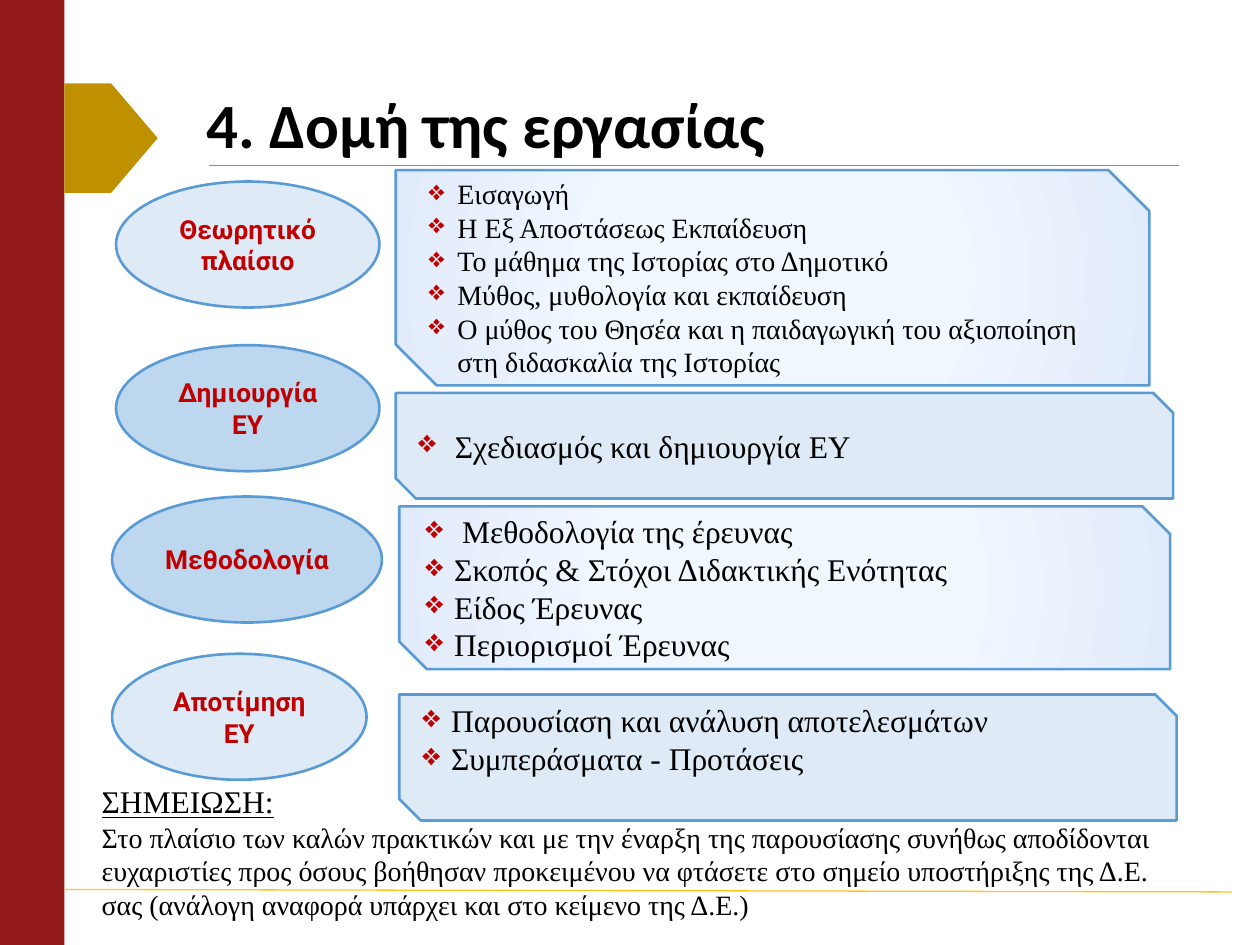
from dataclasses import dataclass

from lxml.etree import SubElement
from pptx import Presentation
from pptx.dml.color import RGBColor
from pptx.enum.shapes import MSO_CONNECTOR, MSO_SHAPE
from pptx.enum.text import MSO_ANCHOR, MSO_AUTO_SIZE, PP_ALIGN
from pptx.oxml import parse_xml
from pptx.oxml.ns import nsdecls, qn
from pptx.util import Cm, Pt


@dataclass(frozen=True)
class Theme:
    heading: str = "Calibri"
    label: str = "Roboto"
    body: str = "Times New Roman"
    title_size: int = 36
    large: int = 18
    medium: int = 16
    small: int = 15
    black: str = "000000"
    red: str = "C00000"
    maroon: str = "931B1B"
    gold: str = "BF9000"
    yellow: str = "FFC61A"
    blue: str = "5B9BD5"
    pale: str = "DEEBF7"
    sky: str = "BDD7EE"
    glow_inner: str = "F1F7FE"
    glow_outer: str = "E1EBFB"


THEME = Theme()
HANG = 0.58
WIDE_HANG = 0.74
GLOW = "glow"

STAGES = [
    ((2.34, 3.66, 5.31, 2.54), THEME.pale, ["Θεωρητικό", "πλαίσιο"]),
    ((2.34, 6.96, 5.31, 2.54), THEME.sky, ["Δημιουργία ΕΥ"]),
    ((2.26, 10.01, 5.44, 2.54), THEME.sky, ["Μεθοδολογία"]),
    ((2.26, 13.18, 5.13, 2.54), THEME.pale, ["Αποτίμηση ΕΥ"]),
]

PANELS = [
    ((7.98, 3.43, 15.19, 4.34), GLOW, 0.19, THEME.medium, 0.13, [
        ("Εισαγωγή", HANG),
        ("Η Εξ Αποστάσεως Εκπαίδευση", HANG),
        ("Το μάθημα της Ιστορίας στο Δημοτικό", HANG),
        ("Μύθος, μυθολογία και εκπαίδευση", HANG),
        ("Ο μύθος του Θησέα και η παιδαγωγική του αξιοποίηση "
         "στη διδασκαλία της Ιστορίας", HANG),
    ]),
    ((7.98, 7.92, 15.67, 2.13), THEME.pale, 0.19, THEME.large, 0.13, [
        ("Σχεδιασμός και δημιουργία ΕΥ", WIDE_HANG),
    ]),
    ((8.05, 10.21, 15.54, 3.28), GLOW, 0.17, THEME.large, 0.13, [
        ("Μεθοδολογία της έρευνας", WIDE_HANG),
        ("Σκοπός & Στόχοι Διδακτικής Ενότητας", HANG),
        ("Είδος Έρευνας", HANG),
        ("Περιορισμοί Έρευνας", HANG),
    ]),
    ((8.05, 14, 15.67, 2.54), THEME.pale, 0.17, THEME.large, 0.88, [
        ("Παρουσίαση και ανάλυση αποτελεσμάτων", HANG),
        ("Συμπεράσματα - Προτάσεις", HANG),
    ]),
]

NOTE = ("Στο πλαίσιο των καλών πρακτικών και με την έναρξη της παρουσίασης "
        "συνήθως αποδίδονται ευχαριστίες προς όσους βοήθησαν προκειμένου να "
        "φτάσετε στο σημείο υποστήριξης της Δ.Ε. σας (ανάλογη αναφορά υπάρχει "
        "και στο κείμενο της Δ.Ε.)")


def rgb(color):
    return RGBColor.from_string(color)


def style_font(paragraph, name, size, color, bold=False, underline=False):
    font = paragraph.font
    font.name, font.size, font.bold = name, Pt(size), bold
    font.underline = underline
    font.color.rgb = rgb(color)


def add_paragraphs(frame, texts):
    frame.text = "\n".join(texts)
    return frame.paragraphs


def fill_glow(shape):
    shape.fill.gradient()
    stops = shape.fill.gradient_stops
    for stop, position, color in zip(
            stops, (0.45, 1), (THEME.glow_inner, THEME.glow_outer)):
        stop.position = position
        stop.color.rgb = rgb(color)
    gradient = shape._element.spPr.find(qn("a:gradFill"))
    gradient.replace(gradient.find(qn("a:lin")), parse_xml(
        f'<a:path {nsdecls("a")} path="circle">'
        '<a:fillToRect l="50000" t="50000" r="50000" b="50000"/></a:path>'))


def add_block(slide, kind, box, fill, outlined=True):
    shape = slide.shapes.add_shape(kind, *map(Cm, box))
    shape.shadow.inherit = False
    if fill == GLOW:
        fill_glow(shape)
    else:
        shape.fill.solid()
        shape.fill.fore_color.rgb = rgb(fill)
    if outlined:
        shape.line.color.rgb = rgb(THEME.blue)
        shape.line.width = Pt(1.5)
    else:
        shape.line.fill.background()
    return shape


def add_rule(slide, ends, color):
    rule = slide.shapes.add_connector(MSO_CONNECTOR.STRAIGHT, *map(Cm, ends))
    rule.line.color.rgb = rgb(color)
    rule.line.width = Pt(0.75)
    SubElement(rule._element.spPr, qn("a:effectLst"))


def add_title(slide, text):
    title = slide.shapes.title
    title.left, title.top, title.width, title.height = map(
        Cm, (3.91, 1.52, 19.99, 2.13))
    frame = title.text_frame
    frame.auto_size = MSO_AUTO_SIZE.NONE
    frame.vertical_anchor = MSO_ANCHOR.MIDDLE
    paragraph, = add_paragraphs(frame, [text])
    paragraph.alignment = PP_ALIGN.LEFT
    paragraph.line_spacing = 0.9
    style_font(paragraph, THEME.heading, THEME.title_size, THEME.black, True)


def add_note(slide, heading, text):
    frame = slide.shapes.add_textbox(
        *map(Cm, (1.8, 15.65, 21.79, 3.07))).text_frame
    frame.word_wrap = True
    first, second = add_paragraphs(frame, [heading, text])
    style_font(first, THEME.body, THEME.large, THEME.black, underline=True)
    style_font(second, THEME.body, THEME.medium, THEME.black)


def add_stage(slide, box, fill, lines):
    stage = add_block(slide, MSO_SHAPE.OVAL, box, fill)
    for paragraph in add_paragraphs(stage.text_frame, lines):
        paragraph.alignment = PP_ALIGN.CENTER
        style_font(paragraph, THEME.label, THEME.small, THEME.red, True)


def add_bullet(paragraph, hang):
    properties = paragraph._p.get_or_add_pPr()
    properties.set("marL", str(Cm(hang)))
    properties.set("indent", str(-Cm(hang)))
    color = SubElement(properties, qn("a:buClr"))
    SubElement(color, qn("a:srgbClr"), val=THEME.red)
    SubElement(properties, qn("a:buChar"), char="❖")


def add_panel(slide, box, fill, snip, size, bottom_margin, items):
    panel = add_block(slide, MSO_SHAPE.SNIP_2_DIAG_RECTANGLE, box, fill)
    panel.adjustments[1] = snip
    frame = panel.text_frame
    frame.margin_bottom = Cm(bottom_margin)
    paragraphs = add_paragraphs(frame, [text for text, _ in items])
    for paragraph, (_, hang) in zip(paragraphs, items):
        paragraph.alignment = PP_ALIGN.LEFT
        add_bullet(paragraph, hang)
        style_font(paragraph, THEME.body, size, THEME.black)


def main():
    presentation = Presentation()
    presentation.slide_width, presentation.slide_height = Cm(25.4), Cm(19.05)
    slide = presentation.slides.add_slide(presentation.slide_layouts[5])
    add_block(slide, MSO_SHAPE.RECTANGLE, (0, 0, 1.3, 19.05), THEME.maroon, False)
    add_rule(slide, (4.22, 3.33, 23.77, 3.33), THEME.blue)
    add_rule(slide, (1.3, 17.93, 24.84, 17.98), THEME.yellow)
    add_block(slide, MSO_SHAPE.PENTAGON, (1.3, 1.68, 1.88, 2.21), THEME.gold, False)
    add_title(slide, "4. Δομή της εργασίας")
    add_note(slide, "ΣΗΜΕΙΩΣΗ:", NOTE)
    for stage in STAGES:
        add_stage(slide, *stage)
    for panel in PANELS:
        add_panel(slide, *panel)
    presentation.save("out.pptx")


if __name__ == "__main__":
    main()
